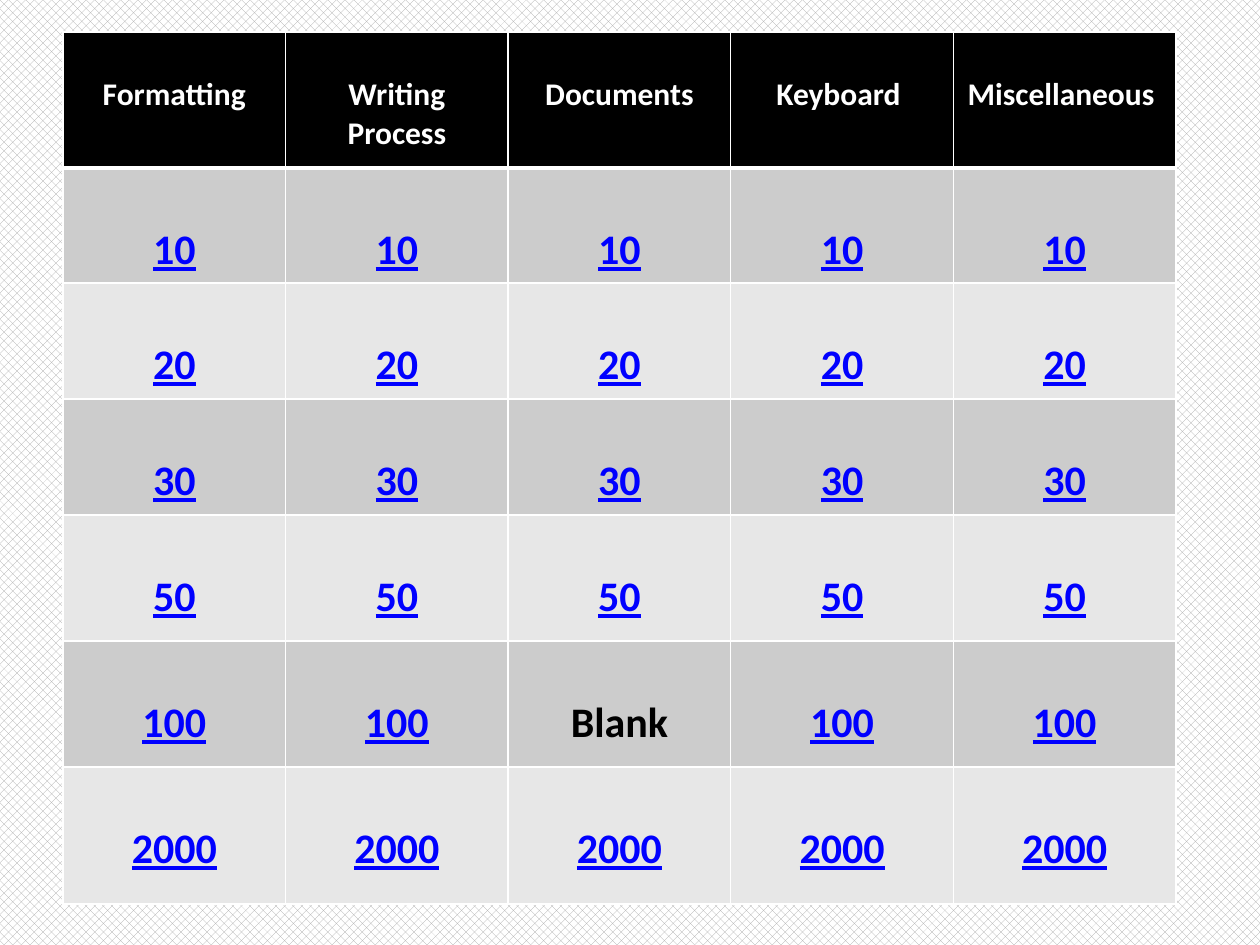
from lxml import etree
from pptx import Presentation
from pptx.dml.color import RGBColor
from pptx.enum.dml import MSO_PATTERN
from pptx.enum.text import PP_ALIGN
from pptx.oxml.ns import qn
from pptx.util import Pt

CENTER = PP_ALIGN.CENTER
HALF_TONE = MSO_PATTERN.PERCENT_50

BLACK = RGBColor(0x00, 0x00, 0x00)
WHITE = RGBColor(0xFF, 0xFF, 0xFF)
LINK_BLUE = RGBColor(0x00, 0x00, 0xFF)
DARK_BAND = RGBColor(0xCC, 0xCC, 0xCC)
LIGHT_BAND = RGBColor(0xE7, 0xE7, 0xE7)
PATTERN_GREY = RGBColor(0xA6, 0xA6, 0xA6)

FONT = "Calibri"
EMU_PER_PX = 914400 / 126

CATEGORIES = ["Formatting", "Writing Process", "Documents", "Keyboard ", "Miscellaneous "]
POINTS = ["10", "20", "30", "50", "100", "2000"]
ROW_HEIGHTS = [136, 115, 116, 116, 126, 126, 137]
BLANK_CELL = (5, 2)


def px(length):
    return round(length * EMU_PER_PX)


def set_borders(cell, top, bottom):
    """Draw white borders; top and bottom widths are in points."""
    properties = cell._tc.get_or_add_tcPr()
    for side, width in (("lnL", 1), ("lnR", 1), ("lnT", top), ("lnB", bottom)):
        line = etree.SubElement(properties, qn(f"a:{side}"), w=str(Pt(width)))
        fill = etree.SubElement(line, qn("a:solidFill"))
        etree.SubElement(fill, qn("a:srgbClr"), val=str(WHITE))


def fill_cell(cell, text, size, color, band, gap, underline=False):
    """Write one centred entry, set one line (gap) below the cell's top."""
    cell.fill.solid()
    cell.fill.fore_color.rgb = band
    cell.margin_top = px(gap)
    cell.text_frame.text = text
    paragraph = cell.text_frame.paragraphs[0]
    paragraph.alignment = CENTER
    font = paragraph.runs[0].font
    font.name = FONT
    font.size = Pt(size)
    font.bold = True
    font.underline = underline
    font.color.rgb = color


def add_quiz_board(slide, left, top, width):
    rows = [CATEGORIES] + [[points] * len(CATEGORIES) for points in POINTS]
    blank_row, blank_column = BLANK_CELL
    rows[blank_row][blank_column] = "Blank"
    board = slide.shapes.add_table(
        len(rows), len(CATEGORIES), px(left), px(top), px(width), px(sum(ROW_HEIGHTS))
    ).table

    for r, (entries, height) in enumerate(zip(rows, ROW_HEIGHTS)):
        board.rows[r].height = px(height)
        for c, entry in enumerate(entries):
            cell = board.cell(r, c)
            set_borders(cell, top=3 if r == 1 else 1, bottom=3 if r == 0 else 1)
            if r == 0:
                fill_cell(cell, entry, 18, WHITE, BLACK, gap=44)
                continue
            band = DARK_BAND if r % 2 else LIGHT_BAND
            linked = (r, c) != BLANK_CELL
            color = LINK_BLUE if linked else BLACK
            fill_cell(cell, entry, 24, color, band, gap=57, underline=linked)


def paint_background(slide):
    fill = slide.background.fill
    fill.patterned()
    fill.pattern = HALF_TONE
    fill.fore_color.rgb = PATTERN_GREY
    fill.back_color.rgb = WHITE


def main():
    deck = Presentation()
    deck.slide_width = px(1260)
    deck.slide_height = px(945)
    slide = deck.slides.add_slide(deck.slide_layouts[6])
    paint_background(slide)
    add_quiz_board(slide, left=63, top=32, width=1113)
    deck.save("out.pptx")


if __name__ == "__main__":
    main()
